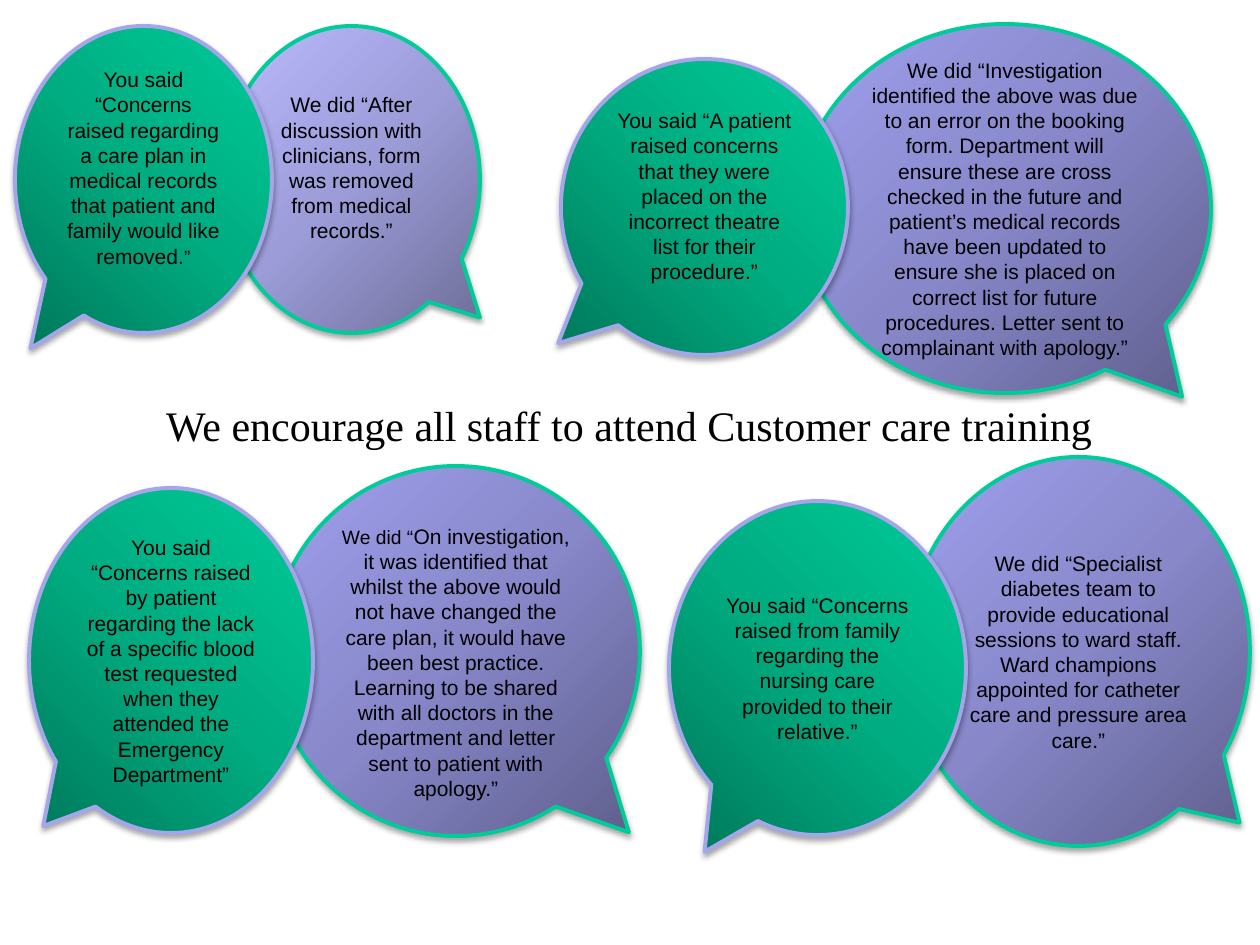
from lxml.etree import SubElement
from pptx import Presentation
from pptx.dml.color import RGBColor
from pptx.enum.shapes import MSO_SHAPE
from pptx.enum.text import MSO_ANCHOR, PP_ALIGN
from pptx.oxml import parse_xml
from pptx.oxml.ns import nsdecls, qn
from pptx.util import Pt

PX = 914400 / 126
INSET = 6

COLOURS = {"text": "000000", "green": "00CC99", "lilac": "A5A5E9"}
GREEN_STOPS = ("00795B", "00AC81", "00CC99")
LILAC_STOPS = ("5F5F8D", "8787C9", "A0A0EE")
PALE_STOPS = ("6E6E98", "9C9CD9", "BBBBFF")

# The darkest point of each gradient sits in the corner the tail points to.
STYLES = {
    "said": {"stops": GREEN_STOPS, "line": "lilac", "focus": {"t": 100, "r": 100}},
    "did": {"stops": LILAC_STOPS, "line": "green", "focus": {"l": 100, "t": 100}},
    "did pale": {"stops": PALE_STOPS, "line": "green", "focus": {"l": 100, "t": 100}},
}

HEADLINE = "We encourage all staff to attend Customer care training"
HEADLINE_BOX = (94, 393, 1071, 63)

# style, (left, top, width, height), tail, text drop in px, runs of (text, size)
BUBBLES = [
    ("did pale", (223, 26, 257, 307), (0.5, 0.45), -12, [
        ("We did “After discussion with clinicians, form was removed from medical "
         "records.”", 12)]),
    ("said", (15, 26, 257, 307), (-0.44, 0.55), -12, [
        ("You said “Concerns raised regarding a care plan in medical records that "
         "patient and family would like removed.", 12), ("”", 11)]),
    ("did", (799, 24, 412, 369), (0.43, 0.51), 0, [
        ("We did “Investigation identified the above was due to an error on the "
         "booking form. Department will ensure these are cross checked in the "
         "future and patient’s medical records have been updated to ensure she is "
         "placed on correct list for future procedures. Letter sent to complainant "
         "with apology.”", 12)]),
    ("said", (561, 59, 287, 296), (-0.51, 0.46), -11, [
        ("You said “A patient raised concerns that they were placed on the "
         "incorrect theatre list for their procedure.”", 12)]),
    ("did", (272, 466, 368, 370), (0.47, 0.49), 11, [
        ("We did “", 11),
        ("On investigation, it was identified that whilst the above would not have "
         "changed the care plan, it would have been best practice. Learning to be "
         "shared with all doctors in the department and letter sent to patient "
         "with apology.”", 12)]),
    ("said", (29, 488, 284, 345), (-0.45, 0.48), 0, [
        ("You said “Concerns raised by patient regarding the lack of a specific "
         "blood test requested when they attended the Emergency Department”", 12)]),
    ("did", (907, 457, 343, 389), (0.47, 0.44), 0, [
        ("We did “Specialist diabetes team to provide educational sessions to ward "
         "staff. Ward champions appointed for catheter care and pressure area "
         "care.”", 12)]),
    ("said", (669, 501, 297, 334), (-0.38, 0.55), 0, [
        ("You said “Concerns raised from family regarding the nursing care "
         "provided to their relative.”", 12)]),
]


def emu(pixels):
    return round(pixels * PX)


def write(shape, runs, font_name):
    frame = shape.text_frame
    frame.word_wrap = True
    para = frame.paragraphs[0]
    para.alignment = PP_ALIGN.CENTER
    for text, size in runs:
        span = para.add_run()
        span.text = text
        for name, value in {"name": font_name, "size": Pt(size)}.items():
            setattr(span.font, name, value)
        span.font.color.rgb = RGBColor.from_string(COLOURS["text"])


def fill_radially(shape, stops, focus):
    """Fill with a circular gradient whose first stop lies at the focus corner."""
    fill = parse_xml(f'<a:gradFill {nsdecls("a")} rotWithShape="1"/>')
    stop_list = SubElement(fill, qn("a:gsLst"))
    for index, colour in enumerate(stops):
        stop = SubElement(stop_list, qn("a:gs"), pos=str(index * 50000))
        SubElement(stop, qn("a:srgbClr"), val=colour)
    circle = SubElement(fill, qn("a:path"), {"path": "circle"})
    SubElement(circle, qn("a:fillToRect"),
               {side: str(percent * 1000) for side, percent in focus.items()})
    shape.element.spPr.find(qn("a:prstGeom")).addnext(fill)


def add_soft_shadow(shape):
    shape.shadow.inherit = False
    effects = shape.element.spPr.find(qn("a:effectLst"))
    shadow = SubElement(effects, qn("a:outerShdw"), blurRad="40000", dist="23000",
                        dir="5400000", rotWithShape="0")
    colour = SubElement(shadow, qn("a:srgbClr"), val="000000")
    SubElement(colour, qn("a:alpha"), val="35000")


def add_bubble(page, style_name, box, tail, drop, runs):
    style = STYLES[style_name]
    bubble = page.shapes.add_shape(MSO_SHAPE.OVAL_CALLOUT, *map(emu, box))
    for index, offset in enumerate(tail):
        bubble.adjustments[index] = offset
    fill_radially(bubble, style["stops"], style["focus"])
    bubble.line.color.rgb = RGBColor.from_string(COLOURS[style["line"]])
    bubble.line.width = Pt(2.25)
    add_soft_shadow(bubble)
    frame = bubble.text_frame
    frame.vertical_anchor = MSO_ANCHOR.MIDDLE
    # Extra inset on one side moves centred text by half as much.
    frame.margin_top = emu(INSET + 2 * max(drop, 0))
    frame.margin_bottom = emu(INSET + 2 * max(-drop, 0))
    write(bubble, runs, "Arial")


def main():
    deck = Presentation()
    deck.slide_width, deck.slide_height = emu(1260), emu(945)
    page = deck.slides.add_slide(deck.slide_layouts[6])
    for bubble in BUBBLES:
        add_bubble(page, *bubble)
    headline = page.shapes.add_textbox(*map(emu, HEADLINE_BOX))
    headline.text_frame.vertical_anchor = MSO_ANCHOR.MIDDLE
    write(headline, [(HEADLINE, 24)], "Times New Roman")
    deck.save("out.pptx")


if __name__ == "__main__":
    main()
